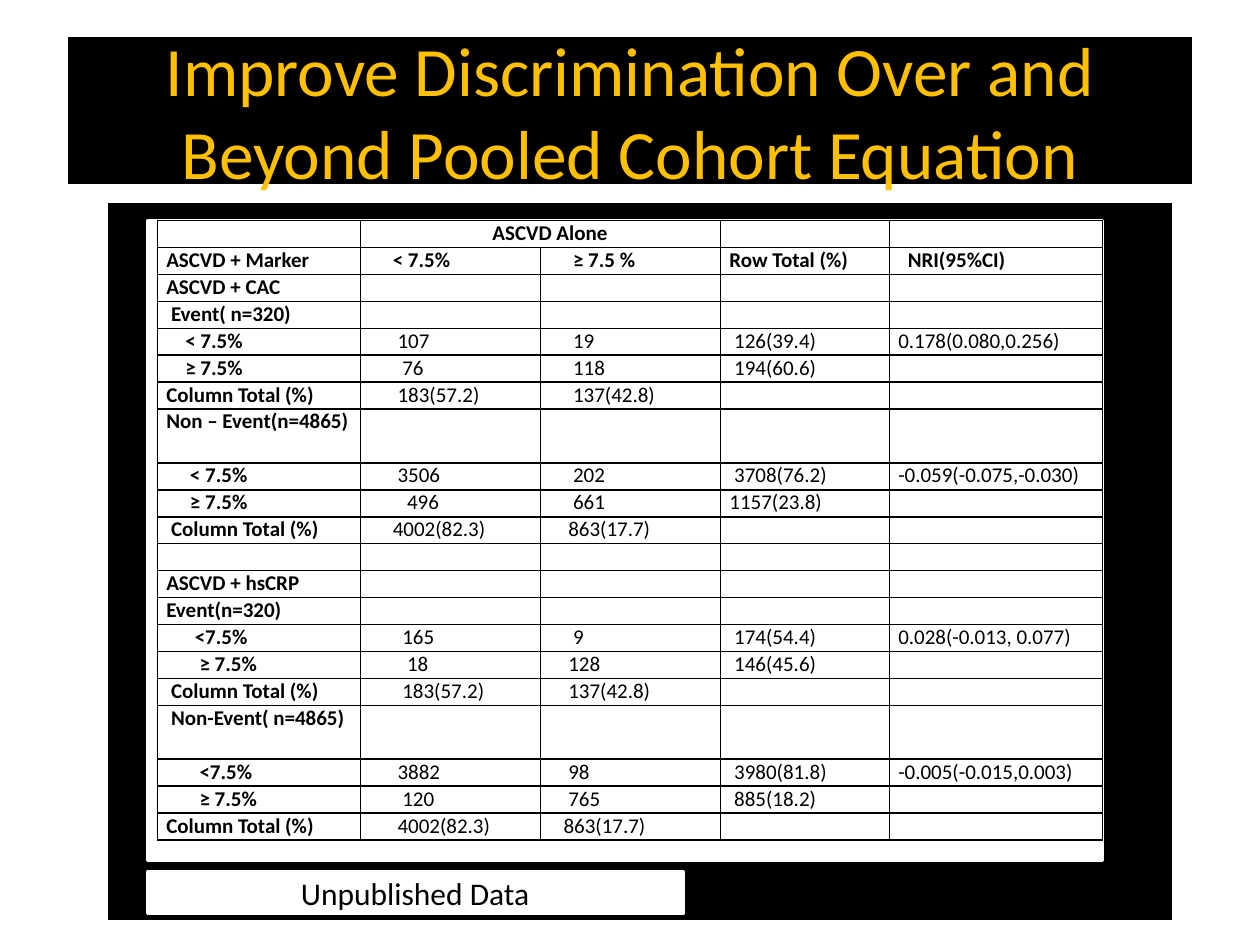
from lxml import etree
from pptx import Presentation
from pptx.dml.color import RGBColor
from pptx.enum.shapes import MSO_SHAPE
from pptx.enum.text import MSO_ANCHOR, PP_ALIGN
from pptx.oxml.ns import qn
from pptx.util import Inches, Pt

RECT = MSO_SHAPE.RECTANGLE
MIDDLE, CENTER = MSO_ANCHOR.MIDDLE, PP_ALIGN.CENTER
FONT = "Calibri"
BLACK, WHITE, GOLD = "000000", "FFFFFF", "FFC000"

# Content: left, top, width, height, fill, line width, text, size, text colour
PANELS = [
    (0.83, 1.58, 8.5, 5.75, BLACK, 4.5, "", 0, ""),
    (1.17, 1.75, 7.58, 5.08, WHITE, 2, "", 0, ""),
    (0.5, 0.25, 9, 1.25, BLACK, 6,
     "Improve Discrimination Over and Beyond Pooled Cohort Equation", 39.6, GOLD),
    (1.17, 6.92, 4.25, 0.33, WHITE, 2, "Unpublished Data", 18, BLACK),
]

# Table rows: cell texts, then the indent step of each cell
ROWS = [
    (["", "ASCVD Alone"], [0, 26]),
    (["ASCVD + Marker", "< 7.5%", "≥ 7.5 %", "Row Total (%)", "NRI(95%CI)"], [0, 5, 5, 0, 2]),
    (["ASCVD + CAC"], [0]),
    (["Event( n=320)"], [1]),
    (["< 7.5%", "107", "19", "126(39.4)", "0.178(0.080,0.256)"], [4, 6, 5, 1, 0]),
    (["≥ 7.5%", "76", "118", "194(60.6)"], [4, 7, 5, 1]),
    (["Column Total (%)", "183(57.2)", "137(42.8)"], [0, 6, 5]),
    (["Non – Event(n=4865)"], [0]),
    (["< 7.5%", "3506", "202", "3708(76.2)", "-0.059(-0.075,-0.030)"], [5, 6, 5, 1, 0]),
    (["≥ 7.5%", "496", "661", "1157(23.8)"], [5, 8, 5, 0]),
    (["Column Total (%)", "4002(82.3)", "863(17.7)"], [1, 5, 4]),
    ([], []),
    (["ASCVD + hsCRP"], [0]),
    (["Event(n=320)"], [0]),
    (["<7.5%", "165", "9", "174(54.4)", "0.028(-0.013, 0.077)"], [6, 7, 5, 1, 0]),
    (["≥ 7.5%", "18", "128", "146(45.6)"], [7, 8, 4, 1]),
    (["Column Total (%)", "183(57.2)", "137(42.8)"], [1, 7, 4]),
    (["Non-Event( n=4865)"], [1]),
    (["<7.5%", "3882", "98", "3980(81.8)", "-0.005(-0.015,0.003)"], [7, 6, 4, 1, 0]),
    (["≥ 7.5%", "120", "765", "885(18.2)"], [7, 7, 4, 1]),
    (["Column Total (%)", "4002(82.3)", "863(17.7)"], [0, 6, 3]),
]
COLS = [1.61, 1.43, 1.43, 1.34, 1.69]
HEADER_ROWS = 2
TALL_ROWS = {7, 17}  # twice the normal height
TABLE_HEIGHT = 4.92
INSET = 0.07
INDENT = Pt(2.71)


def rgb(color):
    return RGBColor.from_string(color)


def style(p, size, color, bold=False):
    for r in p.runs:
        r.font.name, r.font.size, r.font.bold = FONT, Pt(size), bold
        r.font.color.rgb = rgb(color)


def add_panel(s, x, y, w, h, fill, line, text, size, color):
    sp = s.shapes.add_shape(RECT, Inches(x), Inches(y), Inches(w), Inches(h))
    sp.shadow.inherit = False
    sp.fill.solid()
    sp.fill.fore_color.rgb = rgb(fill)
    sp.line.color.rgb = rgb(WHITE)
    sp.line.width = Pt(line)
    if text:
        tf = sp.text_frame
        tf.word_wrap = True
        tf.vertical_anchor = MIDDLE
        tf.text = text
        p = tf.paragraphs[0]
        p.alignment = CENTER
        style(p, size, color)


def add_borders(cell):
    tc_pr = cell._tc.get_or_add_tcPr()
    for i, side in enumerate(("a:lnL", "a:lnR", "a:lnT", "a:lnB")):
        ln = etree.Element(qn(side), w=str(Pt(1)))
        fill = etree.SubElement(ln, qn("a:solidFill"))
        etree.SubElement(fill, qn("a:srgbClr"), val=BLACK)
        tc_pr.insert(i, ln)


def fill_cell(cell, text, indent, bold):
    cell.margin_left = Inches(INSET) + indent * INDENT
    cell.margin_right = Inches(INSET)
    cell.margin_top = cell.margin_bottom = 0
    cell.fill.background()
    add_borders(cell)
    p = cell.text_frame.paragraphs[0]
    if text:
        p.text = text
        style(p, 12, BLACK, bold)
    else:  # keeps empty rows as low as the filled ones
        etree.SubElement(p._p, qn("a:endParaRPr"), sz="1200")


def add_results(s):
    table = s.shapes.add_table(len(ROWS), len(COLS), Inches(1.25), Inches(1.75),
                               Inches(sum(COLS)), Inches(TABLE_HEIGHT)).table
    table.first_row = table.horz_banding = False
    for col, width in zip(table.columns, COLS):
        col.width = Inches(width)
    unit = TABLE_HEIGHT / (len(ROWS) + len(TALL_ROWS))
    for i, (texts, indents) in enumerate(ROWS):
        table.rows[i].height = Inches(unit * (2 if i in TALL_ROWS else 1))
        for j in range(len(COLS)):
            text, indent = (texts[j], indents[j]) if j < len(texts) else ("", 0)
            fill_cell(table.cell(i, j), text, indent, i < HEADER_ROWS or j == 0)
    table.cell(0, 1).merge(table.cell(0, 2))


prs = Presentation()
prs.slide_width, prs.slide_height = Inches(10), Inches(7.5)
s = prs.slides.add_slide(prs.slide_layouts[6])

# Backing panels and title, then the table, then the footnote
for panel in PANELS[:-1]:
    add_panel(s, *panel)
add_results(s)
add_panel(s, *PANELS[-1])

prs.save("out.pptx")
